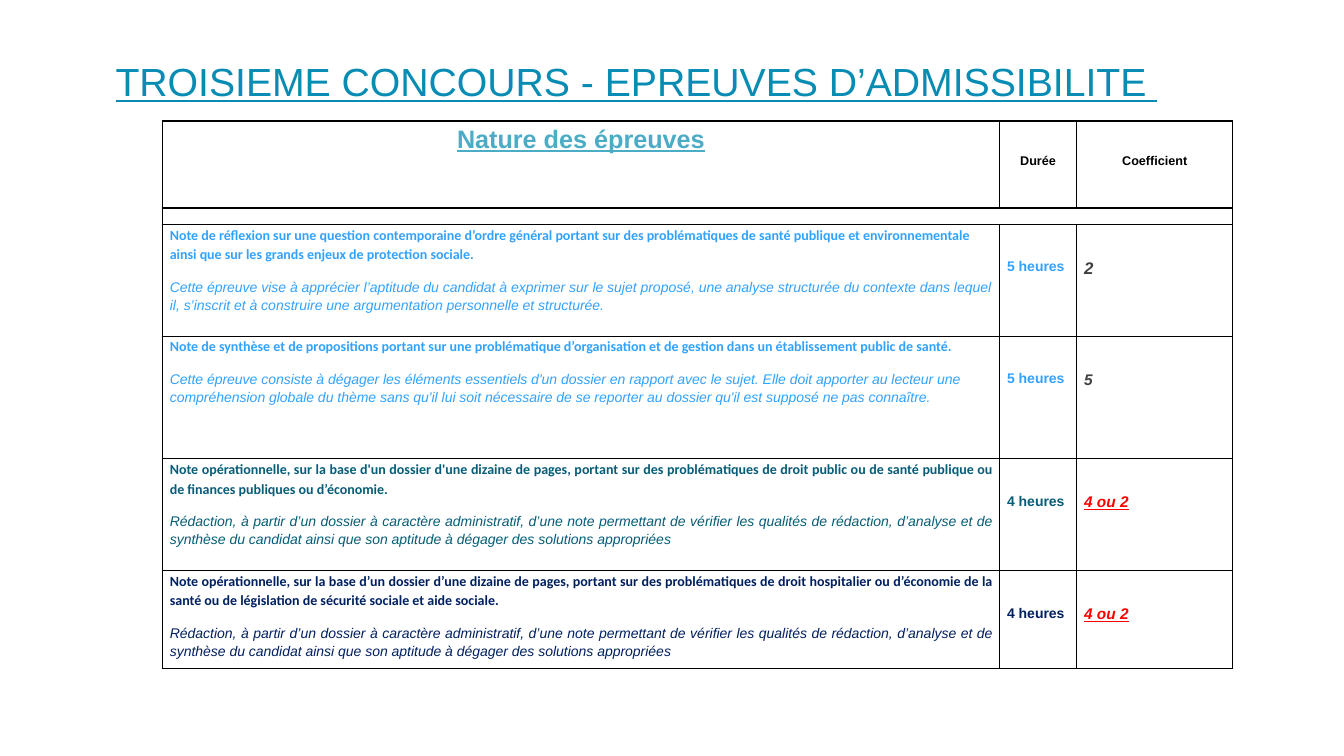
from dataclasses import dataclass

from lxml import etree
from pptx import Presentation
from pptx.dml.color import RGBColor
from pptx.enum.text import MSO_ANCHOR, PP_ALIGN
from pptx.oxml.ns import qn
from pptx.util import Cm, Pt

LEFT, CENTER, JUSTIFY = PP_ALIGN.LEFT, PP_ALIGN.CENTER, PP_ALIGN.JUSTIFY
MIDDLE = MSO_ANCHOR.MIDDLE

BLACK = RGBColor(0x00, 0x00, 0x00)
GREY = RGBColor(0x40, 0x40, 0x40)
RED = RGBColor(0xFF, 0x00, 0x00)
TITLE_BLUE = RGBColor(0x08, 0x8C, 0xB3)
HEADER_BLUE = RGBColor(0x4B, 0xAC, 0xC6)
SKY = RGBColor(0x32, 0xA2, 0xFF)
TEAL = RGBColor(0x06, 0x5D, 0x77)
NAVY = RGBColor(0x00, 0x20, 0x60)

COLUMN_WIDTHS = (21.1, 1.94, 3.94)
ROW_HEIGHTS = (2.19, 0.41, 2.82, 3.09, 2.82, 2.46)
HEADER_DROP = 0.77
VALUE_DROP = 0.82


@dataclass(frozen=True)
class Line:
    text: str
    size: float
    color: RGBColor
    font: str = "Arial"
    bold: bool = True
    italic: bool = False
    underline: bool = False
    align: PP_ALIGN = LEFT


@dataclass(frozen=True)
class Exam:
    name: str
    purpose: str
    duration: str
    coefficient: str
    color: RGBColor
    coefficient_size: float = 11
    coefficient_color: RGBColor = GREY
    underline: bool = False
    align: PP_ALIGN = LEFT


DRAFTING = (
    "Rédaction, à partir d’un dossier à caractère administratif, d’une note "
    "permettant de vérifier les qualités de rédaction, d’analyse et de synthèse "
    "du candidat ainsi que son aptitude à dégager des solutions appropriées"
)
EXAMS = (
    Exam(
        "Note de réflexion sur une question contemporaine d’ordre général portant "
        "sur des problématiques de santé publique et environnementale ainsi que "
        "sur les grands enjeux de protection sociale.",
        "Cette épreuve vise à apprécier l’aptitude du candidat à exprimer sur le "
        "sujet proposé, une analyse structurée du contexte dans lequel il, "
        "s’inscrit et à construire une argumentation personnelle et structurée.",
        "5 heures", "2", SKY, coefficient_size=12,
    ),
    Exam(
        "Note de synthèse et de propositions portant sur une problématique "
        "d’organisation et de gestion dans un établissement public de santé.",
        "Cette épreuve consiste à dégager les éléments essentiels d'un dossier en "
        "rapport avec le sujet. Elle doit apporter au lecteur une compréhension "
        "globale du thème sans qu'il lui soit nécessaire de se reporter au dossier "
        "qu'il est supposé ne pas connaître.",
        "5 heures", "5", SKY,
    ),
    Exam(
        "Note opérationnelle, sur la base d'un dossier d'une dizaine de pages, "
        "portant sur des problématiques de droit public ou de santé publique ou "
        "de finances publiques ou d’économie.",
        DRAFTING, "4 heures", "4 ou 2", TEAL,
        coefficient_color=RED, underline=True, align=JUSTIFY,
    ),
    Exam(
        "Note opérationnelle, sur la base d’un dossier d’une dizaine de pages, "
        "portant sur des problématiques de droit hospitalier ou d’économie de la "
        "santé ou de législation de sécurité sociale et aide sociale.",
        DRAFTING, "4 heures", "4 ou 2", NAVY,
        coefficient_color=RED, underline=True, align=JUSTIFY,
    ),
)


def write_lines(frame, lines: list[Line], spacing: float, after: float) -> None:
    for index, line in enumerate(lines):
        para = frame.add_paragraph() if index else frame.paragraphs[0]
        para.text = line.text
        para.alignment = line.align
        para.line_spacing = spacing
        para.space_after = Pt(after)
        font = para.font
        font.name, font.size = line.font, Pt(line.size)
        font.bold, font.italic = line.bold, line.italic
        font.underline = line.underline
        font.color.rgb = line.color


def style_cell(cell) -> None:
    cell.margin_left = cell.margin_right = Cm(0.19)
    cell.margin_top = cell.margin_bottom = 0
    cell.fill.background()
    properties = cell._tc.get_or_add_tcPr()
    for index, side in enumerate(("lnL", "lnR", "lnT", "lnB")):
        border = etree.Element(qn(f"a:{side}"), w=str(Pt(1)))
        fill = etree.SubElement(border, qn("a:solidFill"))
        etree.SubElement(fill, qn("a:srgbClr"), val=str(BLACK))
        properties.insert(index, border)


def fill_cell(cell, lines: list[Line], drop: float = 0) -> None:
    cell.margin_top = Cm(drop)
    write_lines(cell.text_frame, lines, 1.15, 10)


def add_title(page) -> None:
    box = page.shapes.add_textbox(Cm(1.42), Cm(1.17), Cm(29.24), Cm(1.88))
    frame = box.text_frame
    frame.word_wrap = True
    frame.vertical_anchor = MIDDLE
    title = Line("TROISIEME CONCOURS - EPREUVES D’ADMISSIBILITE ", 28, TITLE_BLUE,
                 bold=False, underline=True, align=CENTER)
    write_lines(frame, [title], 0.9, 0)


def add_exam_table(page) -> None:
    table = page.shapes.add_table(
        len(ROW_HEIGHTS), len(COLUMN_WIDTHS), Cm(4.09), Cm(3.05),
        Cm(sum(COLUMN_WIDTHS)), Cm(sum(ROW_HEIGHTS)),
    ).table
    table.first_row = table.horz_banding = False
    for column, width in zip(table.columns, COLUMN_WIDTHS):
        column.width = Cm(width)
    for row, height in zip(table.rows, ROW_HEIGHTS):
        row.height = Cm(height)
    for cell in table.iter_cells():
        style_cell(cell)

    fill_cell(table.cell(0, 0), [Line("Nature des épreuves", 18, HEADER_BLUE,
                                      underline=True, align=CENTER)])
    for column, label in enumerate(("Durée", "Coefficient"), start=1):
        fill_cell(table.cell(0, column),
                  [Line(label, 9, BLACK, align=CENTER)], HEADER_DROP)

    for column in range(len(COLUMN_WIDTHS)):
        table.cell(1, column).text_frame.paragraphs[0].font.size = Pt(8)
    table.cell(1, 0).merge(table.cell(1, 2))

    for row, exam in enumerate(EXAMS, start=2):
        fill_cell(table.cell(row, 0), [
            Line(exam.name, 10, exam.color, font="Calibri", align=exam.align),
            Line(exam.purpose, 10, exam.color, bold=False, italic=True,
                 align=exam.align),
        ])
        fill_cell(table.cell(row, 1),
                  [Line(exam.duration, 10, exam.color)], VALUE_DROP)
        fill_cell(table.cell(row, 2), [
            Line(exam.coefficient, exam.coefficient_size, exam.coefficient_color,
                 italic=True, underline=exam.underline),
        ], VALUE_DROP)


def main() -> None:
    deck = Presentation()
    deck.slide_width, deck.slide_height = Cm(33.87), Cm(19.05)
    page = deck.slides.add_slide(deck.slide_layouts[6])
    add_title(page)
    add_exam_table(page)
    deck.save("out.pptx")


if __name__ == "__main__":
    main()
